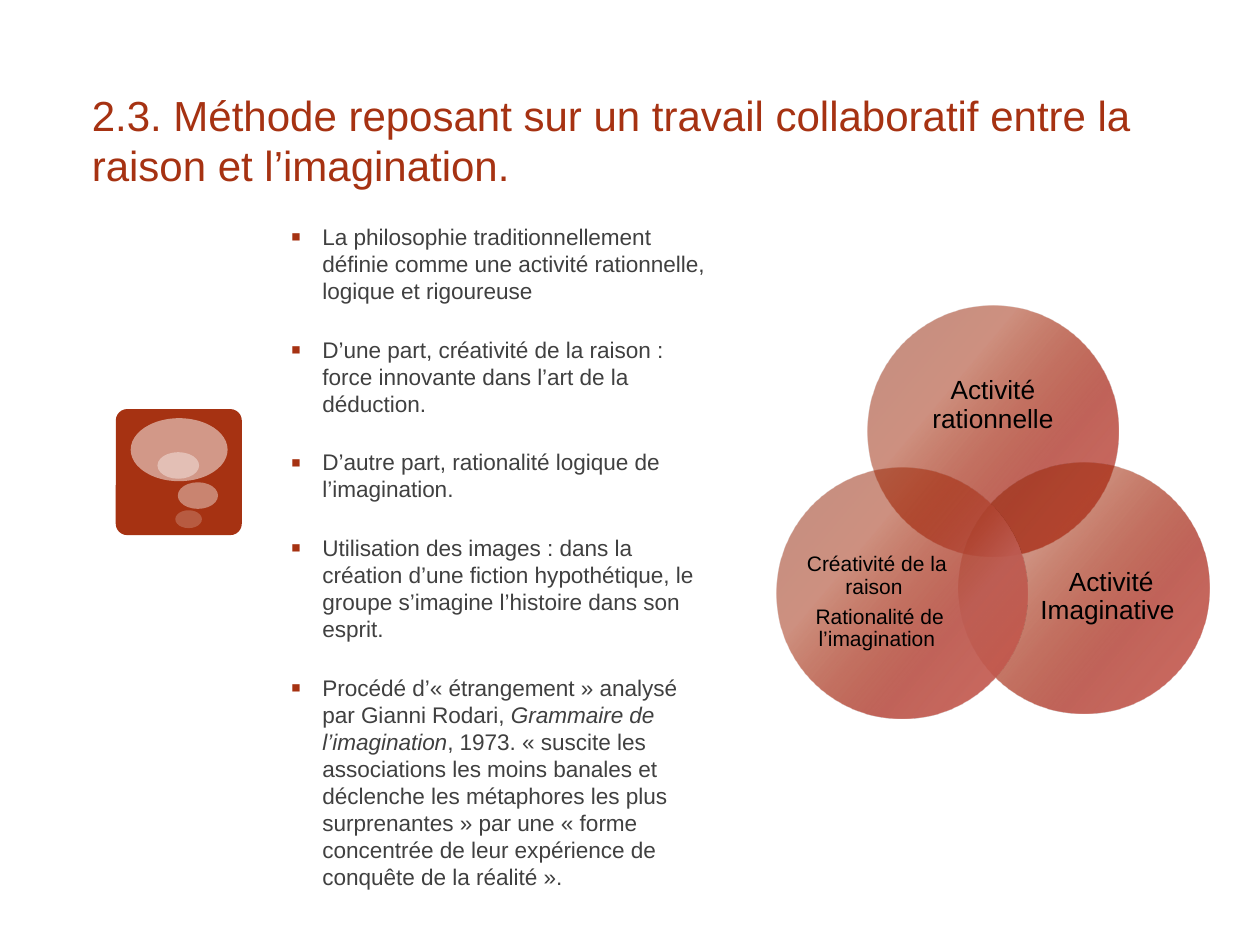
from dataclasses import dataclass

from lxml import etree
from pptx import Presentation
from pptx import util as u
from pptx.dml.color import RGBColor
from pptx.enum import shapes, text
from pptx.oxml.ns import qn

Pt = u.Pt
FONT = "Arial"
COLORS = {"accent": "A63212", "body": "404040", "label": "000000", "bubble": "FFFFFF"}
# Position in %, colour, opacity in %
CIRCLE_STOPS = [(0, "C6554A", 85), (33, "BE5C52", 95), (67, "9E2200", 50), (100, "881D00", 50)]
CIRCLE_ANGLE = 220
CIRCLE_SIZE = 143.3


@dataclass
class Box:
    left: float
    top: float
    width: float
    height: float

    def points(self):
        return Pt(self.left), Pt(self.top), Pt(self.width), Pt(self.height)


@dataclass
class Bubble:
    box: Box
    opacity: int


@dataclass
class Circle:
    left: float
    top: float
    label_box: Box
    label: list[str]
    size: float


TITLE = "2.3. Méthode reposant sur un travail collaboratif entre la raison et l’imagination."

# Each point is a list of (text, italic) runs
POINTS = [
    [("La philosophie traditionnellement définie comme une activité rationnelle, "
      "logique et rigoureuse", False)],
    [("D’une part, créativité de la raison : force innovante dans l’art de la déduction.", False)],
    [("D’autre part, rationalité logique de l’imagination.", False)],
    [("Utilisation des images : dans la création d’une fiction hypothétique, "
      "le groupe s’imagine l’histoire dans son esprit.", False)],
    [("Procédé d’« étrangement » analysé par Gianni Rodari, ", False),
     ("Grammaire de l’imagination", True),
     (", 1973. « suscite les associations les moins banales et déclenche les métaphores "
      "les plus surprenantes » par une « forme concentrée de leur expérience de conquête "
      "de la réalité ».", False)],
]

BUBBLES = [
    Bubble(Box(74.7, 239, 55.4, 36), 50),
    Bubble(Box(101.6, 275.6, 23, 15.2), 40),
    Bubble(Box(100.2, 291.6, 15.2, 10.2), 20),
    Bubble(Box(90, 258.4, 23.8, 15.2), 38),
]

CIRCLES = [
    Circle(495.9, 174.5, Box(514.9, 199.4, 105, 64.8), ["Activité rationnelle"], 15),
    Circle(547.7, 264.2, Box(591.8, 301.7, 86.4, 79.2), ["Activité Imaginative "], 15),
    Circle(444, 267.1, Box(457.9, 304.6, 86.4, 79.2),
           ["Créativité de la raison ", " Rationalité de l’imagination"], 12),
]


def add_run(paragraph, words: str, size: float, color: str, italic: bool = False) -> None:
    run = paragraph.add_run()
    run.text = words
    run.font.name = FONT
    run.font.size = Pt(size)
    run.font.italic = italic
    run.font.color.rgb = RGBColor.from_string(COLORS[color])


def add_text_frame(parent, box: Box, anchor):
    frame = parent.add_textbox(*box.points()).text_frame
    frame.word_wrap = True
    frame.vertical_anchor = anchor
    return frame


def next_paragraph(frame, index: int):
    return frame.add_paragraph() if index else frame.paragraphs[0]


def add_plain_shape(parent, kind, box: Box, color: str):
    shape = parent.add_shape(kind, *box.points())
    shape.shadow.inherit = False
    shape.line.fill.background()
    shape.fill.solid()
    shape.fill.fore_color.rgb = RGBColor.from_string(COLORS[color])
    return shape


def set_alpha(color_element, opacity: int) -> None:
    etree.SubElement(color_element, qn("a:alpha"), val=str(opacity * 1000))


def set_circle_gradient(shape) -> None:
    """Replace the solid fill by the translucent gradient."""
    properties = shape.element.spPr
    gradient = etree.Element(qn("a:gradFill"), rotWithShape="1")
    stops = etree.SubElement(gradient, qn("a:gsLst"))
    for position, color, opacity in CIRCLE_STOPS:
        stop = etree.SubElement(stops, qn("a:gs"), pos=str(position * 1000))
        set_alpha(etree.SubElement(stop, qn("a:srgbClr"), val=color), opacity)
    etree.SubElement(gradient, qn("a:lin"), ang=str(CIRCLE_ANGLE * 60000), scaled="0")
    properties.replace(properties.find(qn("a:solidFill")), gradient)


def set_bullet(paragraph) -> None:
    properties = paragraph._p.get_or_add_pPr()
    properties.set("marL", str(Pt(18)))
    properties.set("indent", str(-Pt(18)))
    bullet_color = etree.SubElement(properties, qn("a:buClr"))
    etree.SubElement(bullet_color, qn("a:srgbClr"), val=COLORS["accent"])
    etree.SubElement(properties, qn("a:buSzPct"), val="130000")
    etree.SubElement(properties, qn("a:buFont"), typeface=FONT)
    etree.SubElement(properties, qn("a:buChar"), char="▪")


def draw_thought_icon(slide) -> None:
    icon = slide.shapes.add_group_shape().shapes
    tile = add_plain_shape(icon, shapes.MSO_SHAPE.ROUNDED_RECTANGLE,
                           Box(66.2, 233.8, 72, 72), "accent")
    tile.adjustments[0] = 0.09
    for bubble in BUBBLES:
        oval = add_plain_shape(icon, shapes.MSO_SHAPE.OVAL, bubble.box, "bubble")
        set_alpha(oval.element.spPr.find(qn("a:solidFill"))[0], bubble.opacity)


def draw_title(slide) -> None:
    frame = add_text_frame(slide.shapes, Box(45.4, 42.5, 659.5, 69.8), text.MSO_ANCHOR.BOTTOM)
    add_run(frame.paragraphs[0], TITLE, 24, "accent")


def draw_points(slide) -> None:
    frame = add_text_frame(slide.shapes, Box(159.1, 123.8, 251.3, 384.5), text.MSO_ANCHOR.TOP)
    for index, runs in enumerate(POINTS):
        paragraph = next_paragraph(frame, index)
        paragraph.space_before = Pt(18)
        set_bullet(paragraph)
        for words, italic in runs:
            add_run(paragraph, words, 12.9, "body", italic)


def draw_circle(venn, circle: Circle) -> None:
    box = Box(circle.left, circle.top, CIRCLE_SIZE, CIRCLE_SIZE)
    set_circle_gradient(add_plain_shape(venn, shapes.MSO_SHAPE.OVAL, box, "accent"))
    frame = add_text_frame(venn, circle.label_box, text.MSO_ANCHOR.MIDDLE)
    frame.margin_left = frame.margin_right = frame.margin_top = frame.margin_bottom = 0
    for index, words in enumerate(circle.label):
        paragraph = next_paragraph(frame, index)
        paragraph.alignment = text.PP_ALIGN.CENTER
        paragraph.line_spacing = 0.9
        paragraph.space_after = Pt(0.35 * circle.size)
        add_run(paragraph, words, circle.size, "label")


def main() -> None:
    deck = Presentation()
    deck.slide_width, deck.slide_height = Pt(720), Pt(540)
    slide = deck.slides.add_slide(deck.slide_layouts[6])
    draw_thought_icon(slide)
    draw_title(slide)
    draw_points(slide)
    venn = slide.shapes.add_group_shape().shapes
    for circle in CIRCLES:
        draw_circle(venn, circle)
    deck.save("out.pptx")


if __name__ == "__main__":
    main()
